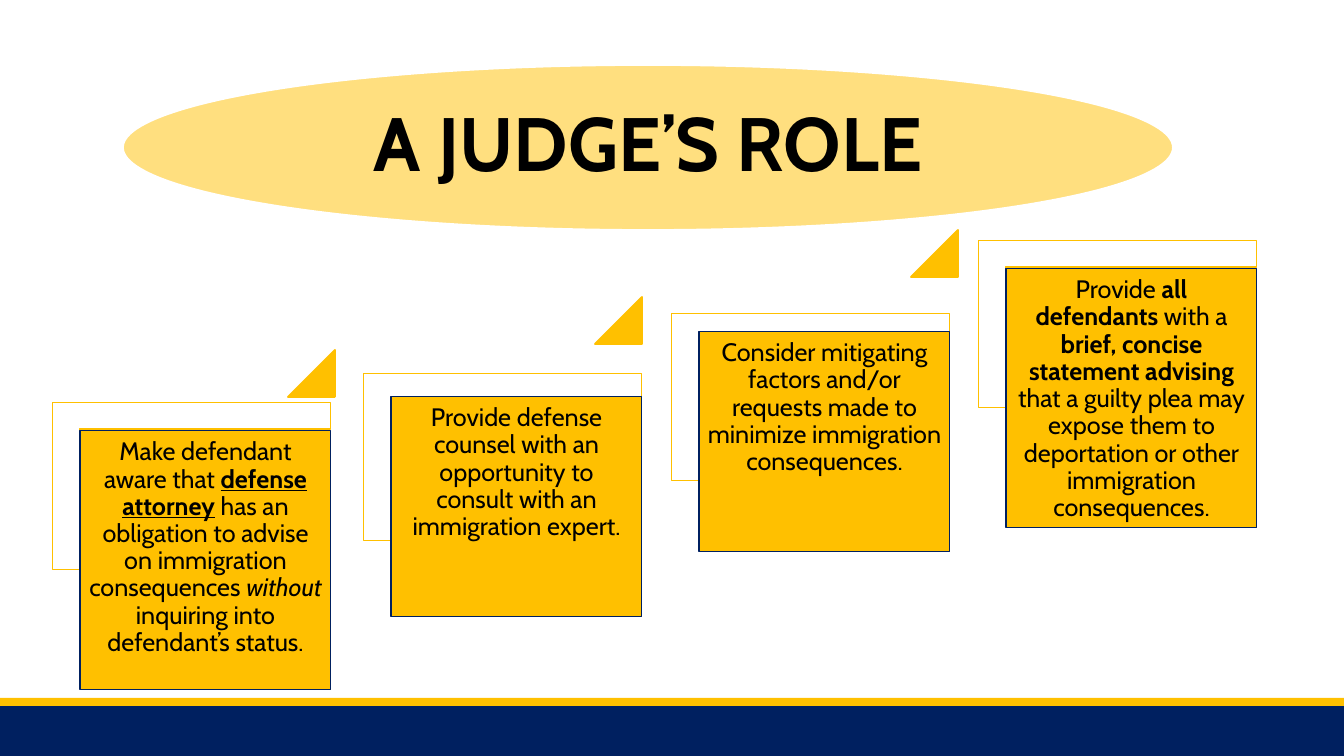
from lxml import etree
from pptx import Presentation
from pptx import util as u
from pptx.dml import color
from pptx.enum import shapes, text
from pptx.oxml import ns

HUES = {"navy": "002060", "gold": "FFC000", "white": "FFFFFF", "black": "000000"}
KIND = shapes.MSO_SHAPE
SCALE = 914400 / 100.8
WIDE, HIGH = 1344, 756
BOLD = {"bold": True}


def px(n):
    return u.Emu(round(n * SCALE))


def hue(name):
    return color.RGBColor.from_string(HUES[name])


class Deck:
    """Holds the style and the current slide."""

    font = {"name": "Cabin"}

    def __init__(self):
        self.show = Presentation()
        self.show.slide_width, self.show.slide_height = px(WIDE), px(HIGH)
        self.slide = self.show.slides.add_slide(self.show.slide_layouts[6])

    def shape(self, kind, at, fill, line=None, width=1.25, adjust=(), turn=0):
        item = self.slide.shapes.add_shape(kind, *map(px, at))
        item.shadow.inherit = False
        item.rotation = turn
        item.fill.solid()
        item.fill.fore_color.rgb = hue(fill)
        if line:
            item.line.color.rgb = hue(line)
            item.line.width = u.Pt(width)
        else:
            item.line.fill.background()
        for i, value in enumerate(adjust):
            item.adjustments[i] = value
        return item

    def fade(self, item, share):
        """Make the fill of a shape partly transparent."""
        fill = item.element.spPr.find(ns.qn("a:solidFill"))
        tint = fill.find(ns.qn("a:srgbClr"))
        etree.SubElement(tint, ns.qn("a:alpha"), val=str(share * 1000))

    def label(self, item, runs, size, inset, anchor):
        frame = item.text_frame
        frame.word_wrap = True
        frame.vertical_anchor = anchor
        for side in ("left", "top", "right", "bottom"):
            setattr(frame, "margin_" + side, px(inset))
        para = frame.paragraphs[0]
        para.alignment = text.PP_ALIGN.CENTER
        para.line_spacing = 0.9
        for words, style in runs:
            run = para.add_run()
            run.text = words
            run.font.color.rgb = hue("black")
            for key, value in {**self.font, "size": u.Pt(size), **style}.items():
                setattr(run.font, key, value)

    def title(self, words, at):
        oval = self.shape(KIND.OVAL, at, "gold", "white")
        self.fade(oval, 50)
        self.label(oval, [(words, BOLD)], 54, 0, text.MSO_ANCHOR.MIDDLE)

    def step(self, left, top, high, rise, runs):
        """Draw a box with its corner frame, whose place starts rise above the box."""
        self.shape(KIND.CORNER, (left + 28, top - rise, 167, 278), "white", "gold",
                   adjust=(0.161, 0.161), turn=90)
        box = self.shape(KIND.RECTANGLE, (left, top, 251, high), "gold", "navy", 0.75)
        self.label(box, runs, 18, 8, text.MSO_ANCHOR.TOP)

    def wedge(self, left, top):
        self.shape(KIND.ISOSCELES_TRIANGLE, (left, top, 47, 47), "gold", "gold",
                   adjust=(1,))


STEPS = [
    (80, 431, 259, 84, [
        ("Make defendant aware that ", {}),
        ("defense attorney", {"bold": True, "underline": True}),
        (" has an obligation to advise on immigration consequences ", {}),
        ("without", {"italic": True}),
        (" inquiring into defendant’s status.", {})]),
    (391, 397, 220, 79, [
        ("Provide defense counsel with an opportunity to consult with an "
         "immigration expert.", {})]),
    (699, 332, 220, 74, [
        ("Consider mitigating factors and/or requests made to minimize "
         "immigration consequences.", {})]),
    (1006, 269, 259, 84, [
        ("Provide ", {}),
        ("all defendants ", BOLD),
        ("with a ", {}),
        ("brief, concise statement advising ", BOLD),
        ("that a guilty plea may expose them to deportation or other "
         "immigration consequences.", {})]),
]
WEDGES = [(288, 350), (595, 297), (911, 230)]


def main():
    deck = Deck()
    deck.shape(KIND.RECTANGLE, (0, 706, WIDE, 50), "navy")
    deck.shape(KIND.RECTANGLE, (0, 698, WIDE, 8), "gold")
    deck.title("A JUDGE’S ROLE", (123, 65, 1050, 165))
    for step in STEPS:
        deck.step(*step)
    for spot in WEDGES:
        deck.wedge(*spot)
    deck.show.save("out.pptx")


if __name__ == "__main__":
    main()
